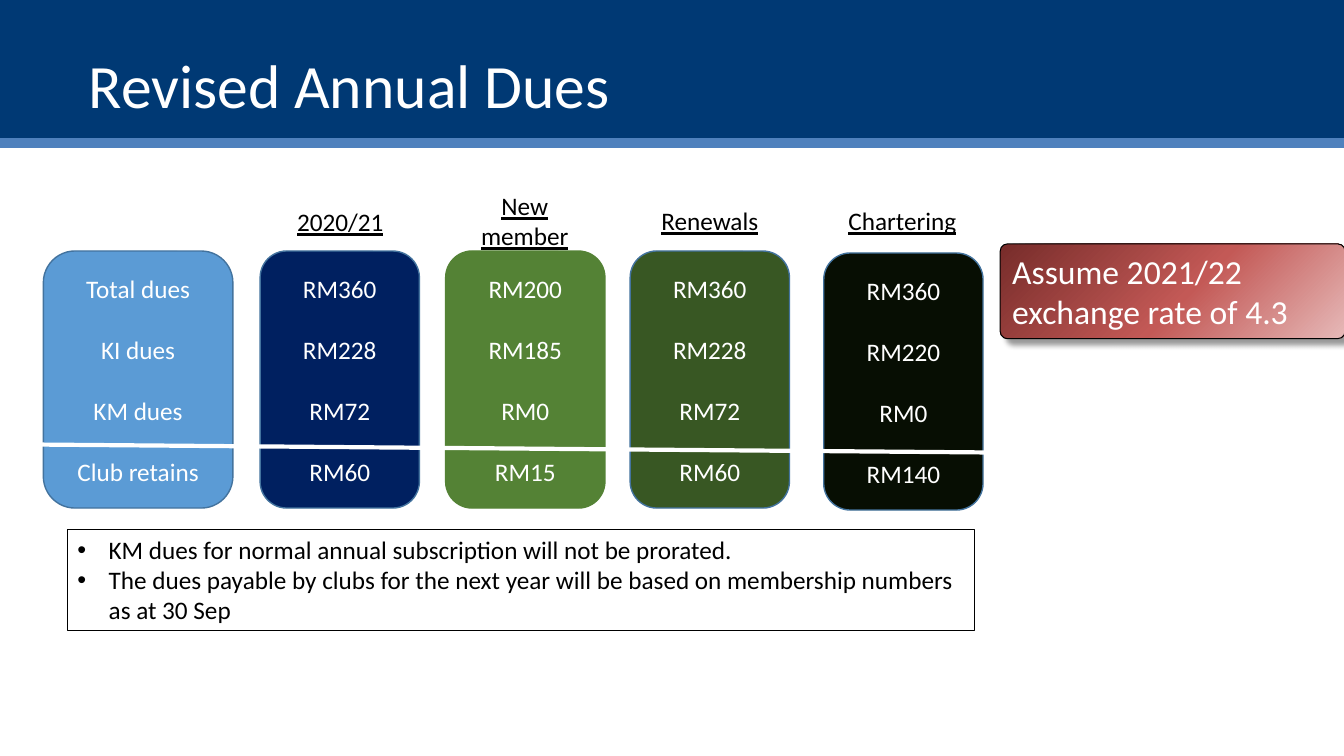
from dataclasses import dataclass
from typing import Optional

from lxml.etree import SubElement
from pptx import Presentation
from pptx.dml.color import RGBColor
from pptx.enum.shapes import MSO_CONNECTOR, MSO_SHAPE
from pptx.enum.text import MSO_ANCHOR, PP_ALIGN
from pptx.oxml import parse_xml
from pptx.oxml.ns import nsdecls, qn
from pptx.util import Inches, Pt


@dataclass(frozen=True)
class Theme:
    font: str = "Calibri"
    title_size: int = 44
    callout_size: int = 24
    body_size: int = 18
    row_gap: int = 22
    white: str = "FFFFFF"
    black: str = "000000"
    band: str = "003974"
    band_edge: str = "4F81BD"
    card_edge: str = "43739E"
    callout_stops: tuple = ((0, "E6B9B8"), (46, "C35956"), (100, "772C2A"))


@dataclass(frozen=True)
class Heading:
    text: str
    left: float
    top: float
    width: float


@dataclass(frozen=True)
class DuesCard:
    left: float
    fill: str
    rows: tuple
    heading: Optional[Heading] = None
    top: float = 2.49
    width: float = 1.58
    edge: str = "43739E"


THEME = Theme()
CARD_HEIGHT = 2.55
CARDS = (
    DuesCard(0.43, "5B9BD5", ("Total dues", "KI dues", "KM dues", "Club retains"), width=1.88),
    DuesCard(2.58, "002060", ("RM360", "RM228", "RM72", "RM60"),
             Heading("2020/21", 2.84, 2, 1.07)),
    DuesCard(4.42, "548235", ("RM200", "RM185", "RM0", "RM15"),
             Heading("New member", 4.64, 1.84, 1.13), edge="548235"),
    DuesCard(6.25, "385723", ("RM360", "RM228", "RM72", "RM60"),
             Heading("Renewals", 6.33, 1.99, 1.42)),
    DuesCard(8.17, "070E03", ("RM360", "RM220", "RM0", "RM140"),
             Heading("Chartering", 8.24, 1.99, 1.42), top=2.51),
)
NOTES = (
    "KM dues for normal annual subscription will not be prorated.",
    "The dues payable by clubs for the next year will be based on "
    "membership numbers as at 30 Sep",
)


def write(frame, lines: tuple, size: int, color: str, align=PP_ALIGN.LEFT,
          gap: int = 0, underline: bool = False) -> None:
    frame.word_wrap = True
    frame.text = "\n".join(lines)
    for index, paragraph in enumerate(frame.paragraphs):
        paragraph.alignment = align
        if gap and index:
            paragraph.space_before = Pt(gap)
        for run in paragraph.runs:
            font = run.font
            font.name, font.size = THEME.font, Pt(size)
            font.color.rgb = RGBColor.from_string(color)
            if underline:
                font.underline = True


def add_box(slide, kind, left: float, top: float, width: float, height: float,
            fill: Optional[str] = None, edge: Optional[str] = None, edge_width: float = 1):
    box = slide.shapes.add_shape(kind, Inches(left), Inches(top), Inches(width), Inches(height))
    box.shadow.inherit = False
    if fill:
        box.fill.solid()
        box.fill.fore_color.rgb = RGBColor.from_string(fill)
    else:
        box.fill.background()
    if edge:
        box.line.color.rgb = RGBColor.from_string(edge)
        box.line.width = Pt(edge_width)
    else:
        box.line.fill.background()
    return box


def add_line(slide, start: tuple, end: tuple, color: str, width: float) -> None:
    line = slide.shapes.add_connector(
        MSO_CONNECTOR.STRAIGHT, *(Inches(value) for value in start + end))
    line.line.color.rgb = RGBColor.from_string(color)
    line.line.width = Pt(width)
    SubElement(line._element.spPr, qn("a:effectLst"))


def add_title_band(slide, text: str) -> None:
    add_box(slide, MSO_SHAPE.RECTANGLE, 0, 0, 13.33, 1.42, THEME.band)
    add_line(slide, (0, 1.42), (13.33, 1.42), THEME.band_edge, 7)
    title = slide.shapes.title
    title.left, title.top = Inches(0.78), Inches(0.25)
    title.width, title.height = Inches(12), Inches(1.17)
    write(title.text_frame, (text,), THEME.title_size, THEME.white)
    title.text_frame.vertical_anchor = MSO_ANCHOR.MIDDLE
    slide.shapes._spTree.append(title._element)  # bring in front of the band


def add_heading(slide, heading: Heading) -> None:
    label = slide.shapes.add_textbox(
        Inches(heading.left), Inches(heading.top), Inches(heading.width), Inches(0.4))
    write(label.text_frame, (heading.text,), THEME.body_size, THEME.black,
          PP_ALIGN.CENTER, underline=True)


def add_card(slide, card: DuesCard) -> None:
    if card.heading:
        add_heading(slide, card.heading)
    box = add_box(slide, MSO_SHAPE.ROUNDED_RECTANGLE, card.left, card.top,
                  card.width, CARD_HEIGHT, card.fill, card.edge)
    write(box.text_frame, card.rows, THEME.body_size, THEME.white,
          PP_ALIGN.CENTER, THEME.row_gap)
    box.text_frame.vertical_anchor = MSO_ANCHOR.MIDDLE


def add_notes_box(slide) -> None:
    box = add_box(slide, MSO_SHAPE.RECTANGLE, 0.67, 5.25, 9, 1.01,
                  edge=THEME.black, edge_width=0.75)
    write(box.text_frame, NOTES, THEME.body_size, THEME.black)
    box.text_frame.vertical_anchor = MSO_ANCHOR.TOP
    for paragraph in box.text_frame.paragraphs:
        properties = paragraph._p.get_or_add_pPr()
        properties.set("marL", str(Inches(0.31)))
        properties.set("indent", str(-Inches(0.31)))
        SubElement(properties, qn("a:buFont"), typeface="Arial")
        SubElement(properties, qn("a:buChar"), char="•")


def add_callout(slide, text: str) -> None:
    """Add the exchange-rate box with its radial gradient and soft shadow."""
    box = add_box(slide, MSO_SHAPE.ROUNDED_RECTANGLE, 9.92, 2.42, 3.42, 0.94,
                  edge=THEME.black, edge_width=0.75)
    box.adjustments[0] = 0.076
    stops = "".join(f'<a:gs pos="{position * 1000}"><a:srgbClr val="{color}"/></a:gs>'
                    for position, color in THEME.callout_stops)
    gradient = parse_xml(
        f'<a:gradFill {nsdecls("a")} rotWithShape="1"><a:gsLst>{stops}</a:gsLst>'
        '<a:path path="circle"><a:fillToRect l="100000" t="100000"/></a:path></a:gradFill>')
    properties = box._element.spPr
    properties.replace(properties.find(qn("a:noFill")), gradient)
    shadow = parse_xml(
        f'<a:outerShdw {nsdecls("a")} blurRad="{Pt(4)}" dist="{Pt(6)}" dir="2700000" '
        f'algn="tl" rotWithShape="0"><a:srgbClr val="{THEME.black}">'
        '<a:alpha val="40000"/></a:srgbClr></a:outerShdw>')
    properties.find(qn("a:effectLst")).append(shadow)
    write(box.text_frame, (text,), THEME.callout_size, THEME.white)
    box.text_frame.vertical_anchor = MSO_ANCHOR.TOP


def main() -> None:
    deck = Presentation()
    deck.slide_width, deck.slide_height = Inches(13.33), Inches(7.5)
    slide = deck.slides.add_slide(deck.slide_layouts.get_by_name("Title Only"))
    add_title_band(slide, "Revised Annual Dues")
    for card in CARDS:
        add_card(slide, card)
    add_line(slide, (0.33, 4.41), (9.92, 4.49), THEME.white, 3)
    add_notes_box(slide)
    add_callout(slide, "Assume 2021/22 exchange rate of 4.3")
    deck.save("out.pptx")


if __name__ == "__main__":
    main()
